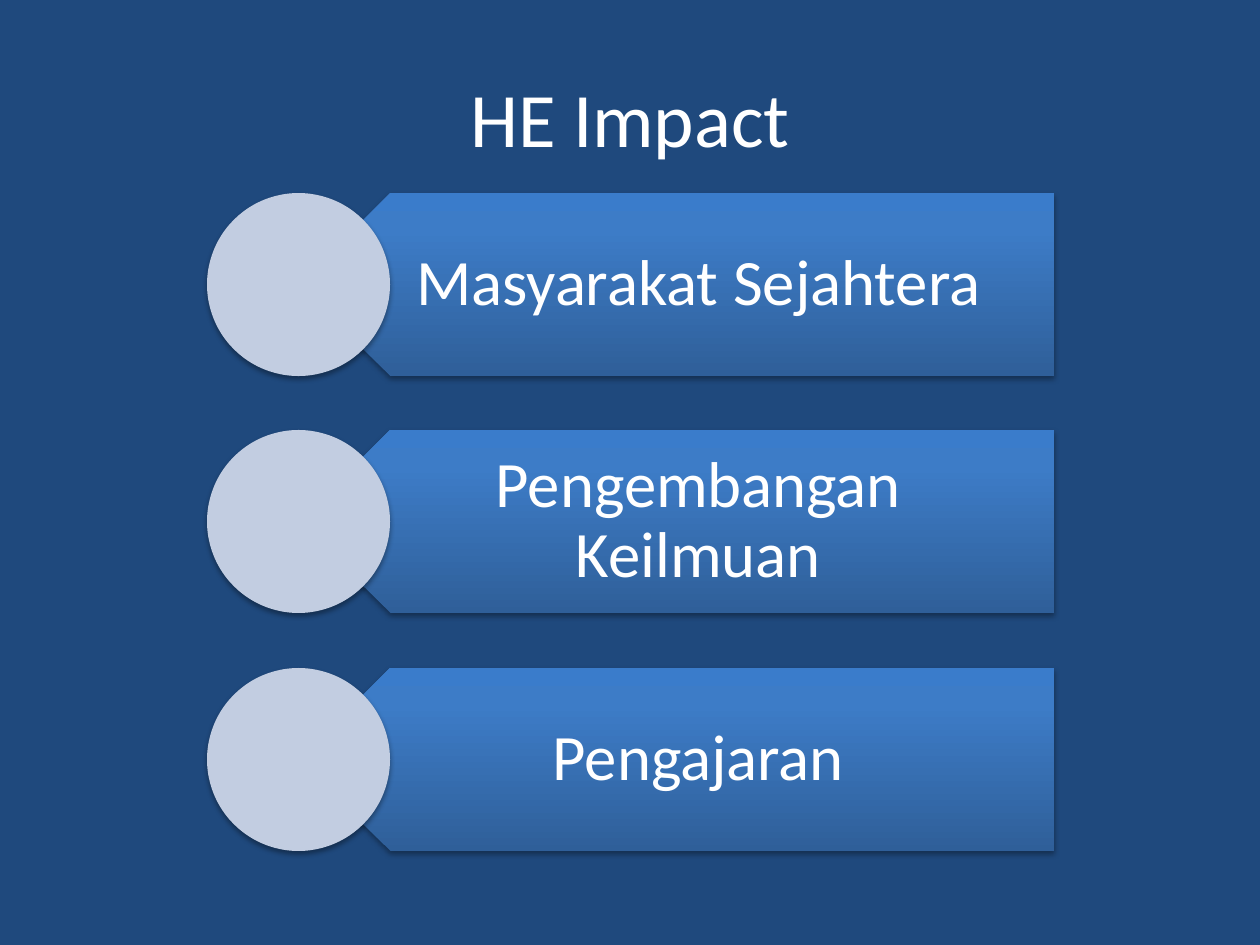
from pptx import Presentation
from pptx.dml.color import RGBColor
from pptx.enum.shapes import MSO_SHAPE
from pptx.enum.text import MSO_ANCHOR, PP_ALIGN
from pptx.oxml import parse_xml
from pptx.oxml.ns import nsdecls
from pptx.util import Pt

EMU_PER_PX = 914400 / 126
ROW_TOP, ROW_H = 193, 183
ROW_PITCH_HALVES = 475  # two row pitches in px
ARROW_LEFT, ARROW_W = 299, 755
CIRCLE_LEFT = 207
IMPACTS = ["Masyarakat Sejahtera", "Pengembangan Keilmuan", "Pengajaran"]
STOPS = [(0, "2F5F99"), (80, "3D7CC7"), (100, "3A7CCB")]


def px(n):
    return round(n * EMU_PER_PX)


def rgb(code):
    return RGBColor.from_string(code)


def apply(obj, values):
    for name, value in values.items():
        setattr(obj, name, value)


def write(tf, text, size, margins, spacing=1.0):
    apply(tf, {"word_wrap": True, "vertical_anchor": MSO_ANCHOR.MIDDLE})
    for side, n in zip(("left", "top", "right", "bottom"), margins):
        setattr(tf, f"margin_{side}", px(n))
    p = tf.paragraphs[0]
    apply(p, {"alignment": PP_ALIGN.CENTER, "line_spacing": spacing})
    r = p.add_run()
    r.text = text
    apply(r.font, {"name": "Calibri", "size": Pt(size)})
    r.font.color.rgb = rgb("FFFFFF")


def add_shadow(sp):
    sp.element.spPr.append(parse_xml(
        f'<a:effectLst {nsdecls("a")}>'
        f'<a:outerShdw blurRad="{Pt(3.1)}" dist="{Pt(1.8)}" dir="5400000" rotWithShape="0">'
        '<a:srgbClr val="000000"><a:alpha val="35000"/></a:srgbClr>'
        '</a:outerShdw></a:effectLst>'))


def add_arrow(s, top):
    sp = s.shapes.add_shape(MSO_SHAPE.PENTAGON, px(ARROW_LEFT), px(top),
                            px(ARROW_W), px(ROW_H))
    sp.rotation = 180
    sp.line.fill.background()
    # The gradient stays upright while the arrow is turned
    stops = "".join(f'<a:gs pos="{pos * 1000}"><a:srgbClr val="{code}"/></a:gs>'
                    for pos, code in STOPS)
    sp.element.spPr.prstGeom.addnext(parse_xml(
        f'<a:gradFill {nsdecls("a")} rotWithShape="0"><a:gsLst>{stops}</a:gsLst>'
        '<a:lin ang="16200000" scaled="0"/></a:gradFill>'))
    add_shadow(sp)


def add_label(s, top, text):
    box = s.shapes.add_textbox(px(ARROW_LEFT), px(top), px(ARROW_W), px(ROW_H))
    write(box.text_frame, text, 37, (81, 19, 37, 19), 0.9)


def add_circle(s, top):
    sp = s.shapes.add_shape(MSO_SHAPE.OVAL, px(CIRCLE_LEFT), px(top),
                            px(ROW_H), px(ROW_H))
    sp.fill.solid()
    sp.fill.fore_color.rgb = rgb("C2CDE1")
    sp.line.fill.background()
    add_shadow(sp)


def add_title(s, text):
    title = s.shapes.title
    apply(title, {"left": px(63), "top": px(38), "width": px(1134), "height": px(158)})
    write(title.text_frame, text, 44, (13, 6, 13, 6))


def main():
    prs = Presentation()
    apply(prs, {"slide_width": px(1260), "slide_height": px(945)})
    s = prs.slides.add_slide(prs.slide_layouts[5])

    # Background and title
    s.background.fill.solid()
    s.background.fill.fore_color.rgb = rgb("1F497D")
    add_title(s, "HE Impact")

    # One row per impact
    for i, text in enumerate(IMPACTS):
        top = ROW_TOP + i * ROW_PITCH_HALVES // 2
        add_arrow(s, top)
        add_label(s, top, text)
        add_circle(s, top)

    prs.save("out.pptx")


if __name__ == "__main__":
    main()
